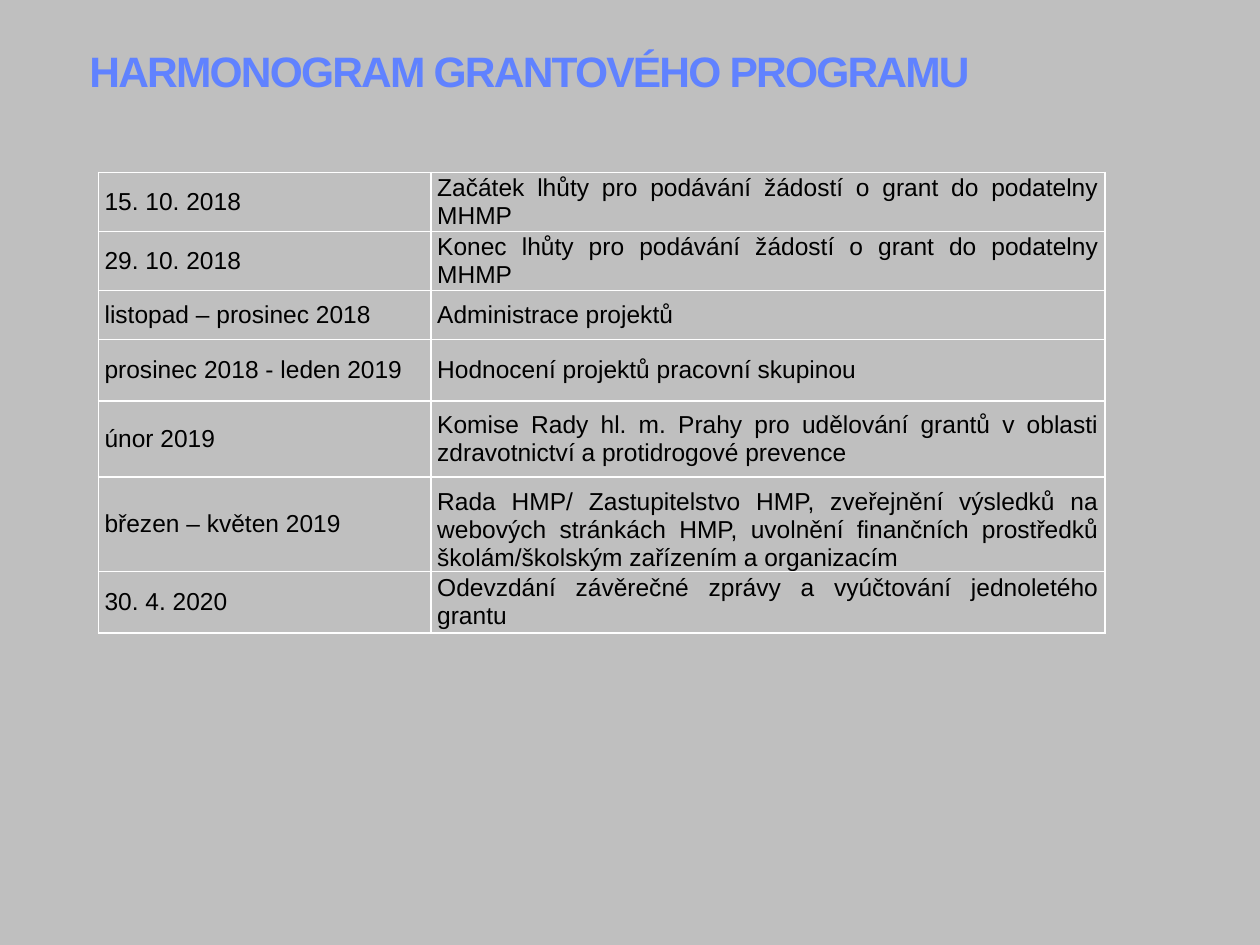
from lxml import etree
from pptx import Presentation
from pptx import util as u
from pptx.dml.color import RGBColor
from pptx.enum import text
from pptx.oxml.ns import qn

COLORS = {"background": "BFBFBF", "title": "6082FF", "body": "000000", "border": "FFFFFF"}
TITLE_FONT = {"name": "Arial", "size": u.Pt(24.3), "bold": True}
BODY_FONT = {"name": "Arial", "size": u.Pt(14), "bold": False}
TITLE_FRAME = {"margin_left": 0, "margin_right": 0, "margin_top": u.Inches(0.04),
               "margin_bottom": 0, "word_wrap": True,
               "vertical_anchor": text.MSO_ANCHOR.TOP}
CELL_FORMAT = {"margin_left": u.Inches(0.05), "margin_right": u.Inches(0.05),
               "margin_top": 0, "margin_bottom": 0,
               "vertical_anchor": text.MSO_ANCHOR.MIDDLE}
COLUMN_WIDTHS = [2.64, 5.35]
SCHEDULE = [
    (0.46, "15. 10. 2018", "Začátek lhůty pro podávání žádostí o grant do podatelny MHMP"),
    (0.46, "29. 10. 2018", "Konec lhůty pro podávání žádostí o grant do podatelny MHMP"),
    (0.39, "listopad – prosinec 2018", "Administrace projektů"),
    (0.49, "prosinec 2018 - leden 2019", "Hodnocení projektů pracovní skupinou"),
    (0.6, "únor 2019", "Komise Rady hl. m. Prahy pro udělování grantů v oblasti "
                       "zdravotnictví a protidrogové prevence"),
    (0.75, "březen – květen 2019", "Rada HMP/ Zastupitelstvo HMP, zveřejnění výsledků na "
                                   "webových stránkách HMP, uvolnění finančních prostředků "
                                   "školám/školským zařízením a organizacím"),
    (0.49, "30. 4. 2020", "Odevzdání závěrečné zprávy a vyúčtování jednoletého grantu"),
]
ROWS_WITHOUT_DATE_SPACING = 2
RESULTS_ROW = 5


def apply(target, values):
    for name, value in values.items():
        setattr(target, name, value)


def write(paragraph, wording, font, color):
    run = paragraph.add_run()
    run.text = wording
    apply(run.font, font)
    run.font.color.rgb = RGBColor.from_string(COLORS[color])
    return run


def add_title(slide, wording):
    title = slide.shapes.add_textbox(u.Inches(0.71), u.Inches(0.32),
                                     u.Inches(8.86), u.Inches(0.72))
    apply(title.text_frame, TITLE_FRAME)
    run = write(title.text_frame.paragraphs[0], wording, TITLE_FONT, "title")
    run.font._element.set("spc", "-100")


def add_borders(cell):
    properties = cell._tc.get_or_add_tcPr()
    for position, side in enumerate(("lnL", "lnR", "lnT", "lnB")):
        line = etree.Element(qn(f"a:{side}"), w=str(u.Pt(1)))
        fill = etree.SubElement(line, qn("a:solidFill"))
        etree.SubElement(fill, qn("a:srgbClr"), val=COLORS["border"])
        properties.insert(position, line)


def fill_cell(cell, wording, alignment, space_after):
    apply(cell, CELL_FORMAT)
    cell.fill.background()
    add_borders(cell)
    paragraph = cell.text_frame.paragraphs[0]
    apply(paragraph, {"alignment": alignment, "space_after": u.Pt(space_after)})
    write(paragraph, wording, BODY_FONT, "body")


def add_schedule(slide):
    height = sum(row[0] for row in SCHEDULE)
    frame = slide.shapes.add_table(len(SCHEDULE), len(COLUMN_WIDTHS),
                                   u.Inches(0.78), u.Inches(1.37),
                                   u.Inches(sum(COLUMN_WIDTHS)), u.Inches(height))
    schedule = frame.table
    apply(schedule, {"first_row": False, "horz_banding": False})
    for column, width in zip(schedule.columns, COLUMN_WIDTHS):
        column.width = u.Inches(width)
    for index, (row_height, date, event) in enumerate(SCHEDULE):
        schedule.rows[index].height = u.Inches(row_height)
        date_spacing = 0 if index < ROWS_WITHOUT_DATE_SPACING else 6
        fill_cell(schedule.cell(index, 0), date, text.PP_ALIGN.LEFT, date_spacing)
        fill_cell(schedule.cell(index, 1), event, text.PP_ALIGN.JUSTIFY, 6)
    schedule.cell(RESULTS_ROW, 1).vertical_anchor = text.MSO_ANCHOR.BOTTOM


def main():
    deck = Presentation()
    apply(deck, {"slide_width": u.Inches(10), "slide_height": u.Inches(7.5)})
    slide = deck.slides.add_slide(deck.slide_layouts[6])
    background = slide.background.fill
    background.solid()
    background.fore_color.rgb = RGBColor.from_string(COLORS["background"])
    add_title(slide, "HARMONOGRAM GRANTOVÉHO PROGRAMU")
    add_schedule(slide)
    deck.save("out.pptx")


if __name__ == "__main__":
    main()
